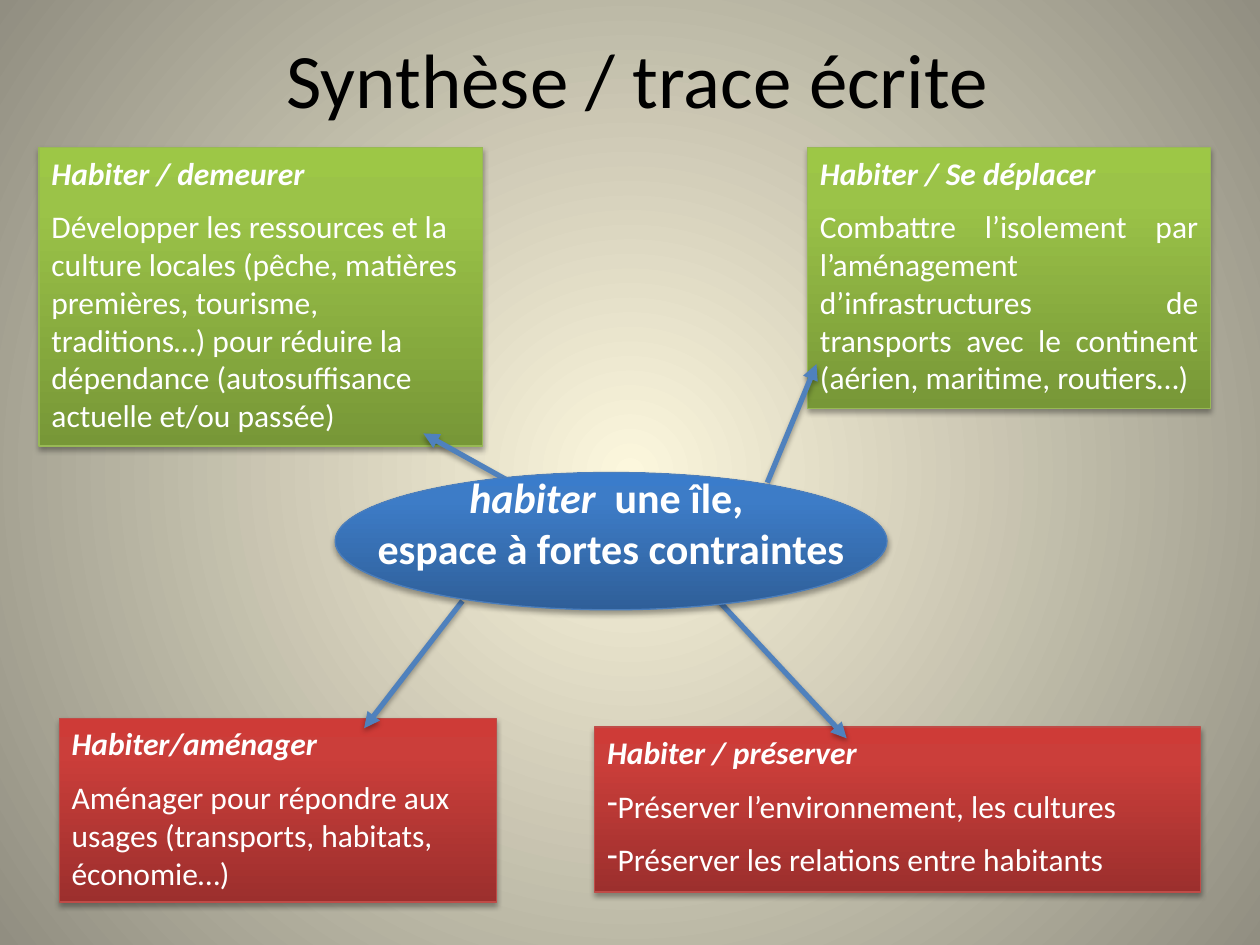
import pptx
import pptx.dml.color
import pptx.enum.shapes
import pptx.enum.text
import pptx.oxml
import pptx.oxml.ns
import pptx.util

Inches = pptx.util.Inches
Pt = pptx.util.Pt
Align = pptx.enum.text.PP_ALIGN
Anchor = pptx.enum.text.MSO_ANCHOR
AutoSize = pptx.enum.text.MSO_AUTO_SIZE
Preset = pptx.enum.shapes.MSO_SHAPE

GREEN = {"stops": [(0, "779737"), (80, "9BC348"), (100, "9DC746")], "line": "98B955"}
RED = {"stops": [(0, "9C2F2D"), (80, "CB3E3A"), (100, "CE3B37")], "line": "BF4C48"}
BLUE = {"stops": [(0, "2F5F99"), (80, "3D7CC7"), (100, "3A7CCB")], "line": "4B7EBC"}


def color(value):
    return pptx.dml.color.RGBColor.from_string(value)


def xml(text):
    namespaces = pptx.oxml.ns.nsdecls("a", "p")
    return pptx.oxml.parse_xml(text.replace(">", f" {namespaces}>", 1))


def apply(target, values):
    for name, value in values.items():
        setattr(target, name, value)


def gradient(stops, direction):
    items = "".join(
        f'<a:gs pos="{position * 1000}"><a:srgbClr val="{value}"/></a:gs>'
        for position, value in stops
    )
    return f'<a:gradFill rotWithShape="1"><a:gsLst>{items}</a:gsLst>{direction}</a:gradFill>'


class SlideBuilder:
    font = "Calibri"
    upward = '<a:lin ang="16200000" scaled="0"/>'
    centered = (
        '<a:path path="circle"><a:fillToRect l="50000" t="50000" r="50000" b="50000"/></a:path>'
    )
    shadow = (
        '<a:effectLst><a:outerShdw blurRad="40000" dist="23000" dir="5400000" rotWithShape="0">'
        '<a:srgbClr val="000000"><a:alpha val="35000"/></a:srgbClr></a:outerShdw></a:effectLst>'
    )

    def __init__(self, presentation):
        self.slide = presentation.slides.add_slide(presentation.slide_layouts[5])

    def background(self, stops):
        fill = gradient(stops, self.centered)
        self.slide.element.cSld.insert(
            0, xml(f"<p:bg><p:bgPr>{fill}<a:effectLst/></p:bgPr></p:bg>")
        )

    def run(self, paragraph, text, size, value="FFFFFF", **formats):
        run = paragraph.add_run()
        run.text = text
        apply(run.font, {"name": self.font, "size": Pt(size), **formats})
        run.font.color.rgb = color(value)

    def title(self, text, left, top, width, height):
        title = self.slide.shapes.title
        lengths = {"left": left, "top": top, "width": width, "height": height}
        apply(title, {name: Inches(length) for name, length in lengths.items()})
        title.text_frame.vertical_anchor = Anchor.MIDDLE
        paragraph = title.text_frame.paragraphs[0]
        paragraph.alignment = Align.CENTER
        self.run(paragraph, text, 44, "000000")

    def shape(self, preset, bounds, theme):
        shape = self.slide.shapes.add_shape(preset, *map(Inches, bounds))
        properties = shape.element.spPr
        properties.prstGeom.addnext(xml(gradient(theme["stops"], self.upward)))
        shape.line.color.rgb = color(theme["line"])
        shape.line.width = Pt(0.75)
        properties.append(xml(self.shadow))
        return shape

    def box(self, bounds, theme, heading, lines, alignment=Align.LEFT, dashes=False):
        frame = self.shape(Preset.RECTANGLE, bounds, theme).text_frame
        apply(frame, {
            "word_wrap": True,
            "auto_size": AutoSize.SHAPE_TO_FIT_TEXT,
            "vertical_anchor": Anchor.TOP,
        })
        paragraph = frame.paragraphs[0]
        paragraph.alignment = alignment
        self.run(paragraph, heading, 18, bold=True, italic=True)
        for line in lines:
            paragraph = frame.add_paragraph()
            apply(paragraph, {"alignment": alignment, "space_before": Pt(9)})
            if dashes:
                paragraph._p.get_or_add_pPr().append(xml('<a:buChar char="-"></a:buChar>'))
            self.run(paragraph, line, 18)

    def ellipse(self, bounds, theme, lines):
        frame = self.shape(Preset.OVAL, bounds, theme).text_frame
        apply(frame, {
            "word_wrap": False,
            "vertical_anchor": Anchor.MIDDLE,
            "margin_bottom": Inches(0.35),
        })
        for index, line in enumerate(lines):
            paragraph = frame.add_paragraph() if index else frame.paragraphs[0]
            paragraph.alignment = Align.CENTER
            for text, italic in line:
                self.run(paragraph, text, 24, bold=True, italic=italic)

    def arrow(self, start, end):
        connector = self.slide.shapes.add_connector(
            pptx.enum.shapes.MSO_CONNECTOR.STRAIGHT, *map(Inches, start + end)
        )
        connector.line.color.rgb = color("4F81BD")
        connector.line.width = Pt(3)
        properties = connector.element.spPr
        properties.ln.append(xml('<a:tailEnd type="triangle"></a:tailEnd>'))
        properties.append(xml(self.shadow))


def main():
    presentation = pptx.Presentation()
    apply(presentation, {"slide_width": Inches(10), "slide_height": Inches(7.5)})
    builder = SlideBuilder(presentation)
    builder.background([(0, "FCF7DD"), (100, "918E81")])
    builder.title("Synthèse / trace écrite", 0.31, 0.16, 9.5, 0.92)
    builder.box(
        (6.41, 1.17, 3.2, 2.07), GREEN, "Habiter / Se déplacer",
        ["Combattre l’isolement par l’aménagement d’infrastructures de transports "
         "avec le continent (aérien, maritime, routiers…)"],
        alignment=Align.JUSTIFY,
    )
    builder.box(
        (0.31, 1.17, 3.52, 2.37), GREEN, "Habiter / demeurer",
        ["Développer les ressources et la culture locales (pêche, matières premières, "
         "tourisme, traditions…) pour réduire la dépendance "
         "(autosuffisance actuelle et/ou passée)"],
    )
    builder.box(
        (0.47, 5.7, 3.47, 1.46), RED, "Habiter/aménager",
        ["Aménager pour répondre aux usages (transports, habitats, économie…)"],
    )
    builder.box(
        (4.72, 5.77, 4.81, 1.31), RED, "Habiter / préserver",
        ["Préserver l’environnement, les cultures", "Préserver les relations entre habitants"],
        dashes=True,
    )
    for start, end in [
        ((4.06, 3.83), (3.36, 3.44)),
        ((6.09, 3.83), (6.48, 2.89)),
        ((3.67, 4.77), (2.89, 5.78)),
        ((5.63, 4.69), (6.72, 5.86)),
    ]:
        builder.arrow(start, end)
    builder.ellipse(
        (2.66, 3.75, 4.38, 1.09), BLUE,
        [[("habiter", True), ("  une île, ", False)], [("espace à fortes contraintes", False)]],
    )
    presentation.save("out.pptx")


if __name__ == "__main__":
    main()
